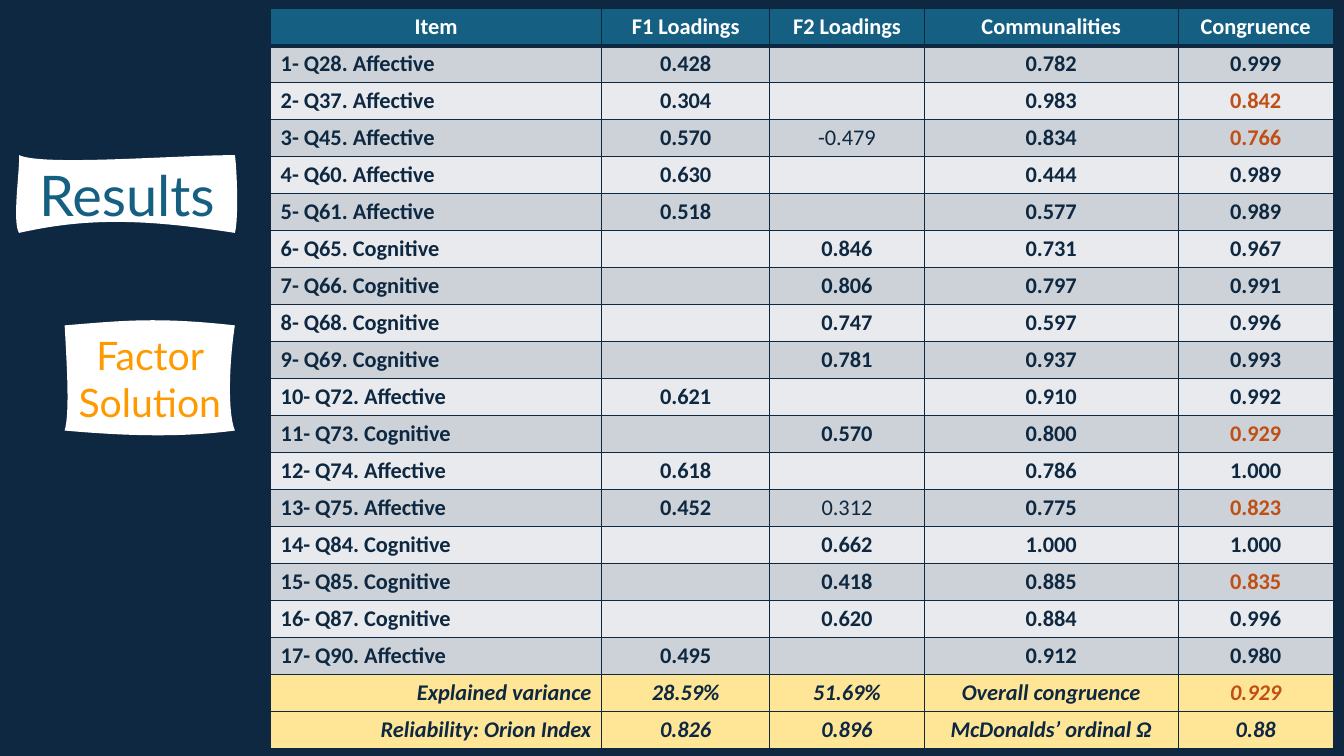
from lxml.etree import SubElement
from pptx import Presentation
from pptx.dml.color import RGBColor
from pptx.enum.text import MSO_ANCHOR, PP_ALIGN
from pptx.oxml.ns import qn
from pptx.util import Cm, Pt

NAVY = RGBColor(0x0E, 0x28, 0x41)
TEAL = RGBColor(0x15, 0x60, 0x82)
ORANGE = RGBColor(0xFF, 0x99, 0x00)
RUST = RGBColor(0xC0, 0x4F, 0x15)
WHITE = RGBColor(0xFF, 0xFF, 0xFF)
GREY = RGBColor(0xCC, 0xD2, 0xD8)
PALE = RGBColor(0xE8, 0xEA, 0xED)
YELLOW = RGBColor(0xFF, 0xE6, 0x97)

LOW_CONGRUENCE = 0.95
COL_WIDTHS = [8.34, 4.24, 3.89, 6.4, 3.91]
TABLE_HEIGHT = 18.64
HEADER = ["Item", "F1 Loadings", "F2 Loadings", "Communalities", "Congruence"]
ITEMS = [
    ["Q28. Affective", "0.428", "", "0.782", "0.999"],
    ["Q37. Affective", "0.304", "", "0.983", "0.842"],
    ["Q45. Affective", "0.570", "-0.479", "0.834", "0.766"],
    ["Q60. Affective", "0.630", "", "0.444", "0.989"],
    ["Q61. Affective", "0.518", "", "0.577", "0.989"],
    ["Q65. Cognitive", "", "0.846", "0.731", "0.967"],
    ["Q66. Cognitive", "", "0.806", "0.797", "0.991"],
    ["Q68. Cognitive", "", "0.747", "0.597", "0.996"],
    ["Q69. Cognitive", "", "0.781", "0.937", "0.993"],
    ["Q72. Affective", "0.621", "", "0.910", "0.992"],
    ["Q73. Cognitive", "", "0.570", "0.800", "0.929"],
    ["Q74. Affective", "0.618", "", "0.786", "1.000"],
    ["Q75. Affective", "0.452", "0.312", "0.775", "0.823"],
    ["Q84. Cognitive", "", "0.662", "1.000", "1.000"],
    ["Q85. Cognitive", "", "0.418", "0.885", "0.835"],
    ["Q87. Cognitive", "", "0.620", "0.884", "0.996"],
    ["Q90. Affective", "0.495", "", "0.912", "0.980"],
]
SUMMARY = [
    ["Explained variance", "28.59%", "51.69%", "Overall congruence", "0.929"],
    ["Reliability: Orion Index", "0.826", "0.896", "McDonalds’ ordinal Ω", "0.88"],
]


def write(tf, text, font="Calibri", size=16, color=NAVY, bold=False,
          italic=False, align=PP_ALIGN.CENTER):
    p = tf.paragraphs[0]
    p.alignment = align
    if not text:
        SubElement(p._p, qn("a:endParaRPr"), sz=str(size * 100))
        return
    r = p.add_run()
    r.text = text
    r.font.name, r.font.size = font, Pt(size)
    r.font.bold, r.font.italic = bold, italic
    r.font.color.rgb = color


class LoadingsSlide:
    def __init__(self, prs):
        self.s = prs.slides.add_slide(prs.slide_layouts[6])
        fill = self.s.background.fill
        fill.solid()
        fill.fore_color.rgb = NAVY

    def card(self, text, left, top, right, bottom, controls, **fmt):
        """White card whose four sides are curves, clockwise from the top."""
        corners = [(right, top), (right, bottom), (left, bottom), (left, top)]
        fb = self.s.shapes.build_freeform(Cm(left), Cm(top))
        fb.add_line_segments([(Cm(x), Cm(y)) for x, y in corners])
        sp = fb.convert_to_shape()

        # Bend each straight side
        outline = next(sp._element.iter(qn("a:path")))
        outline.set("stroke", "0")
        sides = outline.findall(qn("a:lnTo"))
        for side, bend, corner in zip(sides, controls, corners):
            curve = SubElement(outline, qn("a:cubicBezTo"))
            for x, y in (*bend, corner):
                SubElement(curve, qn("a:pt"), x=str(Cm(x) - Cm(left)),
                           y=str(Cm(y) - Cm(top)))
            outline.replace(side, curve)

        sp.shadow.inherit = False
        sp.fill.solid()
        sp.fill.fore_color.rgb = WHITE
        sp.line.color.rgb = NAVY
        sp.line.width = Pt(2)
        tf = sp.text_frame
        tf.word_wrap = True
        tf.vertical_anchor = MSO_ANCHOR.MIDDLE
        write(tf, text, font="Lato", **fmt)

    def table(self, left, top, rows):
        frame = self.s.shapes.add_table(
            rows, len(COL_WIDTHS), Cm(left), Cm(top),
            Cm(sum(COL_WIDTHS)), Cm(TABLE_HEIGHT))
        tbl = frame.table
        tbl.horz_banding = False
        for col, width in zip(tbl.columns, COL_WIDTHS):
            col.width = Cm(width)
        return tbl

    def cell(self, cell, text, fill, top_line=1, bottom_line=1, **fmt):
        cell.margin_top = cell.margin_bottom = Cm(0.1)
        cell.vertical_anchor = MSO_ANCHOR.MIDDLE
        tc_pr = cell._tc.get_or_add_tcPr()
        for side, pts in zip("LRTB", (1, 1, top_line, bottom_line)):
            ln = SubElement(tc_pr, qn("a:ln" + side), w=str(Pt(pts)))
            SubElement(SubElement(ln, qn("a:solidFill")), qn("a:srgbClr"), val=str(NAVY))
        cell.fill.solid()
        cell.fill.fore_color.rgb = fill
        write(cell.text_frame, text, **fmt)


def congruence_color(value):
    return RUST if float(value) < LOW_CONGRUENCE else NAVY


def main():
    prs = Presentation()
    prs.slide_width, prs.slide_height = Cm(33.87), Cm(19.05)
    slide = LoadingsSlide(prs)

    # Title and subtitle cards
    slide.card("Results", 0.48, 3.91, 5.92, 5.87, [
        ((1.09, 4.19), (4.42, 3.91)), ((5.97, 4.22), (6.02, 5.51)),
        ((3.61, 5.51), (2.16, 5.49)), ((0.3, 5.59), (0.51, 4.22))],
        size=40, color=TEAL)
    slide.card("Factor Solution", 1.63, 8.2, 5.92, 10.85, [
        ((3.07, 8.08), (3.96, 7.98)), ((5.77, 9.19), (5.74, 10.41)),
        ((4.65, 11.02), (3.28, 11)), ((1.75, 10.44), (1.7, 9.42))],
        size=28, color=ORANGE)

    # Table header
    tbl = slide.table(6.82, 0.22, 1 + len(ITEMS) + len(SUMMARY))
    for c, text in enumerate(HEADER):
        slide.cell(tbl.cell(0, c), text, TEAL, bottom_line=3, color=WHITE, bold=True)

    # Items: low congruence in rust, secondary loadings not bold
    for n, (item, *values) in enumerate(ITEMS, 1):
        fill = GREY if n % 2 else PALE
        top_line = 3 if n == 1 else 1
        slide.cell(tbl.cell(n, 0), f"{n}- {item}", fill, top_line,
                   bold=True, align=PP_ALIGN.LEFT)
        for c, text in enumerate(values, 1):
            secondary = c == 2 and values[0] != ""
            color = congruence_color(text) if c == 4 else NAVY
            slide.cell(tbl.cell(n, c), text, fill, top_line,
                       bold=not secondary, color=color)

    # Summary rows
    for n, row in enumerate(SUMMARY, 1 + len(ITEMS)):
        for c, text in enumerate(row):
            overall = c == 4 and row[3] == "Overall congruence"
            slide.cell(tbl.cell(n, c), text, YELLOW, bold=True, italic=True,
                       color=congruence_color(text) if overall else NAVY,
                       align=PP_ALIGN.CENTER if c else PP_ALIGN.RIGHT)

    prs.save("out.pptx")


if __name__ == "__main__":
    main()
